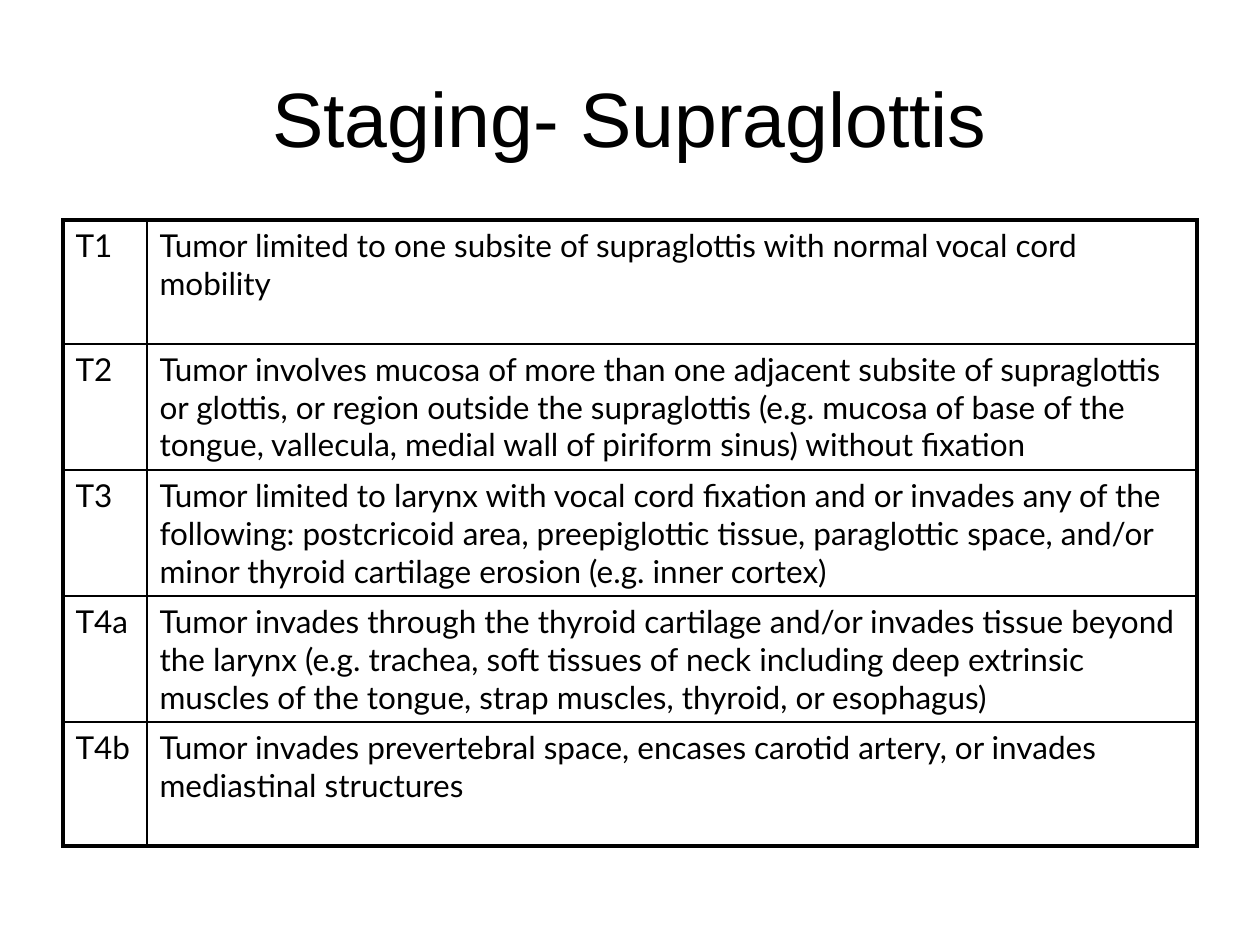
from lxml.etree import SubElement as Sub
from pptx import Presentation
from pptx.dml.color import RGBColor as Rgb
from pptx.enum.text import MSO_ANCHOR as Anchor, PP_ALIGN as Align
from pptx.oxml.ns import qn
from pptx.util import Pt

HUES = {"ink": "000000", "page": "FFFFFF"}
STAGES = [
    ("T1", "Tumor limited to one subsite of supraglottis with normal vocal cord mobility"),
    ("T2", "Tumor involves mucosa of more than one adjacent subsite of supraglottis or glottis, "
           "or region outside the supraglottis (e.g. mucosa of base of the tongue, vallecula, "
           "medial wall of piriform sinus) without fixation"),
    ("T3", "Tumor limited to larynx with vocal cord fixation and or invades any of the following: "
           "postcricoid area, preepiglottic tissue, paraglottic space, and/or minor thyroid "
           "cartilage erosion (e.g. inner cortex)"),
    ("T4a", "Tumor invades through the thyroid cartilage and/or invades tissue beyond the larynx "
            "(e.g. trachea, soft tissues of neck including deep extrinsic muscles of the tongue, "
            "strap muscles, thyroid, or esophagus)"),
    ("T4b", "Tumor invades prevertebral space, encases carotid artery, or invades "
            "mediastinal structures"),
]


def px(num):
    """Turn px into EMU at 126 px to the inch."""
    return round(num * 914400 / 126)


def style(frame, font, size):
    """Format every run in a text frame."""
    for para in frame.paragraphs:
        for run in para.runs:
            run.font.name, run.font.size = font, Pt(size)
            run.font.color.rgb = Rgb.from_string(HUES["ink"])


def edge(cell, sides):
    """Draw cell borders, given a width in points for each side."""
    props = cell._tc.get_or_add_tcPr()
    for spot, (side, width) in enumerate(sides.items()):
        line = props.makeelement(qn("a:ln" + side), {"w": str(Pt(width))})
        fill = Sub(line, qn("a:solidFill"))
        Sub(fill, qn("a:srgbClr"), val=HUES["ink"])
        props.insert(spot, line)


def add_title(slide, box, text):
    """Place the slide title in its box."""
    title = slide.shapes.title
    title.left, title.top, title.width, title.height = map(px, box)
    frame = title.text_frame
    frame.text = text
    frame.vertical_anchor = Anchor.MIDDLE
    frame.paragraphs[0].alignment = Align.CENTER
    style(frame, "Arial", 44)


def add_stages(slide, box, rows):
    """Place the staging table, with a thick frame and thin inner lines."""
    key, last = 84, len(rows) - 1
    table = slide.shapes.add_table(len(rows), 2, *map(px, box)).table
    table.first_row = table.horz_banding = False
    table.columns[0].width, table.columns[1].width = px(key), px(box[2] - key)
    for i, row in enumerate(rows):
        table.rows[i].height = px(box[3] / len(rows))
        for j, text in enumerate(row):
            cell = table.cell(i, j)
            cell.text = text
            cell.fill.background()
            style(cell.text_frame, "Lato", 18)
            outer = {"L": j == 0, "R": j == 1, "T": i == 0, "B": i == last}
            edge(cell, {side: 2.25 if out else 1 for side, out in outer.items()})


def main():
    """Build and save the slide."""
    deck = Presentation()
    deck.slide_width, deck.slide_height = px(1260), px(945)
    slide = deck.slides.add_slide(deck.slide_layouts[5])
    back = slide.background.fill
    back.solid()
    back.fore_color.rgb = Rgb.from_string(HUES["page"])
    add_title(slide, (63, 38, 1134, 158), "Staging- Supraglottis")
    add_stages(slide, (63, 220, 1134, 620), STAGES)
    deck.save("out.pptx")


if __name__ == "__main__":
    main()
